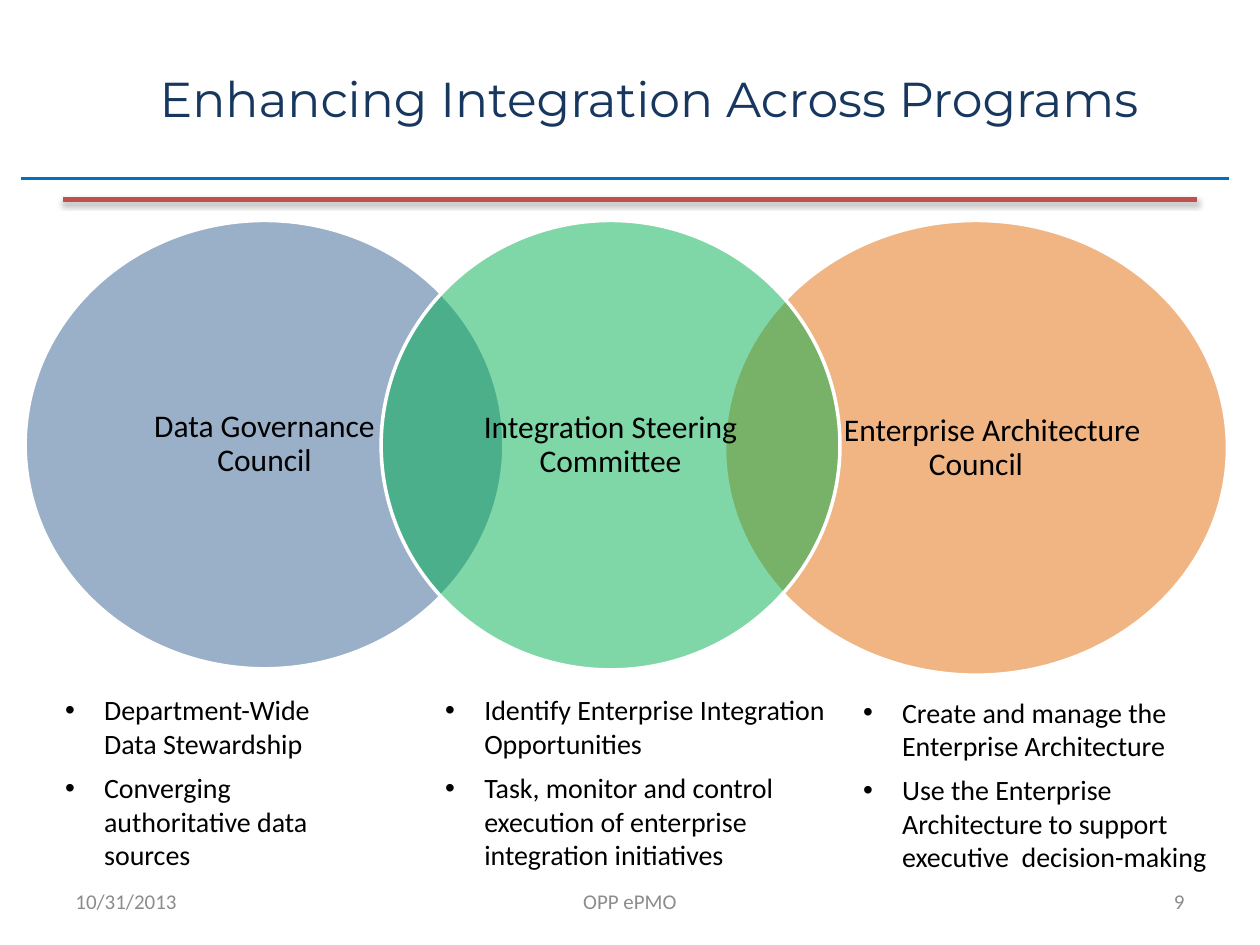
from dataclasses import dataclass
from typing import NamedTuple

from lxml.etree import SubElement as Sub
from pptx import Presentation as Deck
from pptx.dml.color import RGBColor as Rgb
from pptx.enum.shapes import MSO_CONNECTOR as Conn, MSO_SHAPE as Form
from pptx.enum.text import MSO_ANCHOR as Anchor, MSO_AUTO_SIZE as Fit, PP_ALIGN as Align
from pptx.oxml.ns import qn
from pptx.util import Inches, Pt

COLS, ROWS = 120, 90
WIDE, HIGH = Inches(10), Inches(7.5)


@dataclass(frozen=True)
class Theme:
    head: str = "Montserrat"
    body: str = "Calibri"
    navy: str = "17375E"
    blue: str = "0070C0"
    red: str = "C0504D"
    gray: str = "8C8C8C"
    ink: str = "000000"
    rim: str = "FFFFFF"
    title: int = 28
    label: int = 18
    list: int = 16
    foot: int = 12


class Box(NamedTuple):
    col: float
    row: float
    cols: float
    rows: float


class Disc(NamedTuple):
    text: str
    box: Box
    fill: str
    shift: float


class Points(NamedTuple):
    box: Box
    items: tuple[str, ...]


class Foot(NamedTuple):
    text: str
    box: Box
    align: Align


LOOK = Theme()

DISCS = (
    Disc("Data Governance Council", Box(2.4, 21, 45.6, 42.7), "376092", 0),
    Disc("Enterprise Architecture Council", Box(69, 21, 47.9, 43.3), "E46C0A", 0.26),
    Disc("Integration Steering Committee", Box(36.3, 21, 43.7, 42.8), "00B050", 0),
)

LISTS = (
    Points(Box(5, 65.4, 31, 18.4), (
        "Department-Wide Data Stewardship",
        "Converging authoritative data sources")),
    Points(Box(41.2, 65.4, 38.8, 18.4), (
        "Identify Enterprise Integration Opportunities",
        "Task, monitor and control execution of enterprise integration initiatives")),
    Points(Box(81, 65.6, 39, 18.4), (
        "Create and manage the Enterprise Architecture",
        "Use the Enterprise Architecture to support executive  decision-making")),
)

FEET = (
    Foot("10/31/2013", Box(6, 83.4, 28, 4.8), Align.LEFT),
    Foot("OPP ePMO", Box(41, 83.4, 38, 4.8), Align.CENTER),
    Foot("9", Box(86, 83.4, 28, 4.8), Align.RIGHT),
)


def across(cols: float) -> int:
    return round(WIDE * cols / COLS)


def down(rows: float) -> int:
    return round(HIGH * rows / ROWS)


def frame(box: Box) -> tuple[int, int, int, int]:
    return across(box.col), down(box.row), across(box.cols), down(box.rows)


def place(shape, box: Box) -> None:
    shape.left, shape.top, shape.width, shape.height = frame(box)


def style(line, size: int, tint: str, face: str = LOOK.body) -> None:
    for run in line.runs:
        font = run.font
        font.name, font.size, font.bold = face, Pt(size), False
        font.color.rgb = Rgb.from_string(tint)


def draw_title(shape, text: str) -> None:
    place(shape, Box(14, 1.8, 105.4, 15))
    body = shape.text_frame
    body.text = text
    body.auto_size = Fit.NONE
    body.vertical_anchor = Anchor.MIDDLE
    line = body.paragraphs[0]
    line.alignment = Align.LEFT
    style(line, LOOK.title, LOOK.navy, LOOK.head)


def draw_rule(slide, start: float, end: float, row: float, tint: str, width: int, shade: bool) -> None:
    rule = slide.shapes.add_connector(
        Conn.STRAIGHT, across(start), down(row), across(end), down(row))
    rule.line.color.rgb = Rgb.from_string(tint)
    rule.line.width = Pt(width)
    glow = Sub(rule._element.spPr, qn("a:effectLst"))
    if shade:
        cast = Sub(glow, qn("a:outerShdw"), blurRad=str(Pt(3.1)), dist=str(Pt(1.8)),
                   dir="5400000", rotWithShape="0")
        tone = Sub(cast, qn("a:srgbClr"), val=LOOK.ink)
        Sub(tone, qn("a:alpha"), val="35000")


def draw_disc(slide, disc: Disc) -> None:
    shape = slide.shapes.add_shape(Form.OVAL, *frame(disc.box))
    shape.shadow.inherit = False
    shape.fill.solid()
    shape.fill.fore_color.rgb = Rgb.from_string(disc.fill)
    tone = shape._element.spPr.find(qn("a:solidFill")).find(qn("a:srgbClr"))
    Sub(tone, qn("a:alpha"), val="50000")
    shape.line.color.rgb = Rgb.from_string(LOOK.rim)
    shape.line.width = Pt(2)
    body = shape.text_frame
    body.text = disc.text
    body.word_wrap = True
    body.vertical_anchor = Anchor.MIDDLE
    body.margin_left = body.margin_right = Inches(0.09)
    body.margin_top = body.margin_bottom = 0
    line = body.paragraphs[0]
    line._p.get_or_add_pPr().set("indent", str(Inches(disc.shift)))
    line.alignment = Align.CENTER
    line.line_spacing = 0.9
    style(line, LOOK.label, LOOK.ink)


def draw_list(shape, points: Points) -> None:
    place(shape, points.box)
    body = shape.text_frame
    body.text = "\n".join(points.items)
    body.word_wrap = True
    body.auto_size = Fit.NONE
    body.vertical_anchor = Anchor.TOP
    for rank, line in enumerate(body.paragraphs):
        props = line._p.get_or_add_pPr()
        props.set("marL", str(Inches(0.31)))
        props.set("indent", str(Inches(-0.31)))
        Sub(props, qn("a:buFont"), typeface="Arial")
        Sub(props, qn("a:buChar"), char="•")
        line.space_before = Pt(6 if rank else 0)
        style(line, LOOK.list, LOOK.ink)


def draw_foot(slide, foot: Foot) -> None:
    body = slide.shapes.add_textbox(*frame(foot.box)).text_frame
    body.text = foot.text
    body.word_wrap = True
    body.vertical_anchor = Anchor.MIDDLE
    line = body.paragraphs[0]
    line.alignment = foot.align
    style(line, LOOK.foot, LOOK.gray)


def main() -> None:
    deck = Deck()
    deck.slide_width, deck.slide_height = WIDE, HIGH
    slide = deck.slides.add_slide(deck.slide_layouts.get_by_name("Comparison"))
    title, *slots = slide.placeholders
    draw_title(title, "Enhancing Integration Across Programs")
    for slot, points in zip(slots, LISTS):
        draw_list(slot, points)
    for spare in slots[len(LISTS):]:
        spare._element.getparent().remove(spare._element)
    draw_rule(slide, 2, 117, 17, LOOK.blue, 2, False)
    draw_rule(slide, 6, 114, 19, LOOK.red, 3, True)
    for disc in DISCS:
        draw_disc(slide, disc)
    for foot in FEET:
        draw_foot(slide, foot)
    deck.save("out.pptx")


if __name__ == "__main__":
    main()
